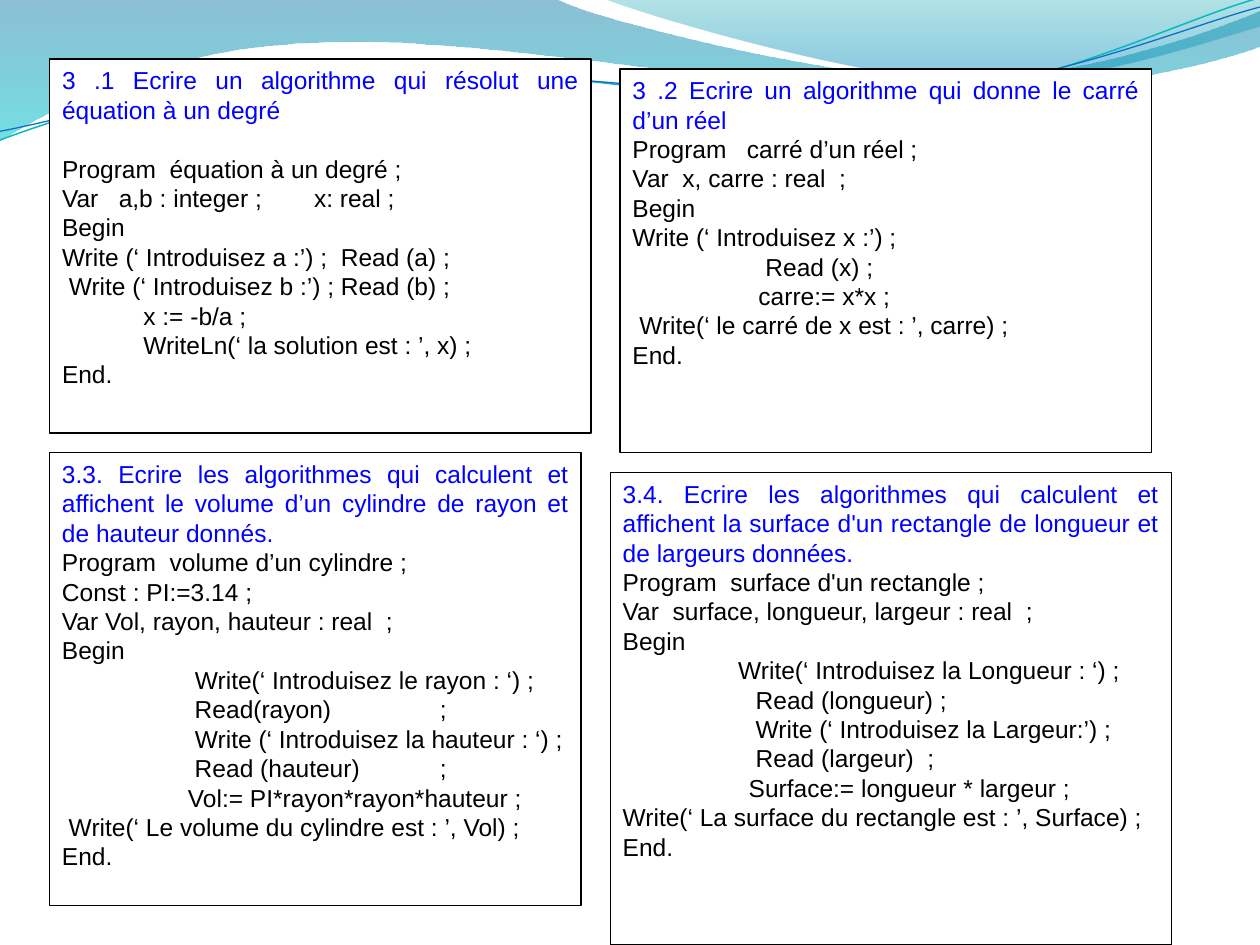
from dataclasses import dataclass

from lxml import etree
from pptx import Presentation
from pptx.dml.color import RGBColor
from pptx.enum.shapes import MSO_SHAPE
from pptx.enum.text import MSO_ANCHOR, PP_ALIGN
from pptx.oxml.ns import qn
from pptx.util import Pt

RECT = MSO_SHAPE.RECTANGLE
TOP = MSO_ANCHOR.TOP
LEFT, BOTH = PP_ALIGN.LEFT, PP_ALIGN.JUSTIFY


@dataclass(frozen=True)
class Theme:
    font: str = "Arial"
    size: float = 14
    head: str = "0000FF"
    ink: str = "000000"
    paper: str = "FFFFFF"
    edge: float = 0.75
    teal: str = "0AB8BF"
    blue: str = "0F6FC6"
    wave: tuple = ((0, "0074A1", 45), (1, "00C6CF", 55))
    crest: tuple = ((0, "00A1A9", 30), (0.8, "008BBF", 45))


THEME = Theme()


@dataclass(frozen=True)
class Curve:
    """Each step holds one point (line) or three points (cubic), flat."""
    start: tuple
    steps: tuple
    stops: tuple = ()
    color: str = ""
    width: float = 0


@dataclass(frozen=True)
class Line:
    text: str
    dent: float = 0


@dataclass(frozen=True)
class Box:
    x: float
    y: float
    w: float
    h: float
    title: str
    lines: tuple
    gap: float = 0


CURVES = (
    Curve((0, 0), (
        (317, -1), (343, 12, 478, 45, 546, 45), (614, 45, 690, 19, 720, 6),
        (721, 26), (708, 32, 626, 55, 537, 54), (447, 54, 275, 20, 185, 24),
        (93, 26, 33, 60, -1, 81)), stops=THEME.wave),
    Curve((345, -1), (
        (366, 8, 491, 45, 554, 47), (616, 50, 692, 23, 720, 15),
        (720, 0)), stops=THEME.crest),
    Curve((0, 80), (
        (35, 67, 114, 41, 199, 37), (284, 34, 427, 64, 513, 58),
        (599, 51, 675, 11, 719, -1)), color=THEME.teal, width=0.85),
    Curve((0, 75), (
        (34, 69, 118, 44, 204, 40), (290, 37, 430, 60, 516, 54),
        (602, 48, 678, 15, 720, 4)), color=THEME.blue, width=0.75),
)

STEP, DEEP = 72, 76

BOXES = (
    Box(348.75, 270, 320.5, 270,
        "3.4. Ecrire les algorithmes qui calculent et affichent la surface "
        "d'un rectangle de longueur et de largeurs données.",
        (Line("Program  surface d'un rectangle ;"),
         Line("Var  surface, longueur, largeur : real  ;"),
         Line("Begin"),
         Line("Write(‘ Introduisez la Longueur : ‘) ;", 66),
         Line("Read (longueur) ;", DEEP),
         Line("Write (‘ Introduisez la Largeur:’) ;", DEEP),
         Line("Read (largeur)  ;", DEEP),
         Line("Surface:= longueur * largeur ;", STEP),
         Line("Write(‘ La surface du rectangle est : ’, Surface) ;"),
         Line("End."))),
    Box(28.35, 258.75, 303.75, 258.75,
        "3.3. Ecrire les algorithmes qui calculent et affichent le volume "
        "d’un cylindre de rayon et de hauteur donnés.",
        (Line("Program  volume d’un cylindre ;"),
         Line("Const : PI:=3.14 ;"),
         Line("Var Vol, rayon, hauteur : real  ;"),
         Line("Begin"),
         Line("Write(‘ Introduisez le rayon : ‘) ;", DEEP),
         Line("\t Read(rayon)\t;"),
         Line("Write (‘ Introduisez la hauteur : ‘) ;", DEEP),
         Line("\t Read (hauteur)\t;"),
         Line("Vol:= PI*rayon*rayon*hauteur ;", STEP),
         Line(" Write(‘ Le volume du cylindre est : ’, Vol) ;"),
         Line("End."))),
    Box(354.35, 39.4, 303.75, 219.4,
        "3 .2 Ecrire un algorithme qui donne le carré d’un réel",
        (Line("Program   carré d’un réel ;"),
         Line("Var  x, carre : real  ;"),
         Line("Begin"),
         Line("Write (‘ Introduisez x :’) ;"),
         Line("Read (x) ;", DEEP),
         Line("carre:= x*x ;", STEP),
         Line(" Write(‘ le carré de x est : ’, carre) ;"),
         Line("End."))),
    Box(28.35, 33.75, 309.4, 213.75,
        "3 .1 Ecrire un algorithme qui résolut une équation à un degré",
        (Line("Program  équation à un degré ;"),
         Line("Var   a,b : integer ;\tx: real ;"),
         Line("Begin"),
         Line("Write (‘ Introduisez a :’) ;  Read (a) ;"),
         Line(" Write (‘ Introduisez b :’) ; Read (b) ;"),
         Line("x := -b/a ;", 46.5),
         Line("WriteLn(‘ la solution est : ’, x) ;", 46.5),
         Line("End.")), gap=16.8),
)


def rgb(code: str) -> RGBColor:
    return RGBColor.from_string(code)


def bend(shape, steps: tuple) -> None:
    """Join each three lines that stand for a cubic into one curve."""
    lines = iter(list(shape._element.iter(qn("a:lnTo"))))
    for step in steps:
        first = next(lines)
        if len(step) == 6:
            cubic = etree.Element(qn("a:cubicBezTo"))
            first.addprevious(cubic)
            for line in (first, next(lines), next(lines)):
                cubic.append(line[0])
                line.getparent().remove(line)


def shade(shape, stops: tuple) -> None:
    """Fill from top to bottom with see-through colours."""
    shape.fill.gradient()
    shape.fill.gradient_angle = 270
    for stop, (place, code, alpha) in zip(shape.fill.gradient_stops, stops):
        stop.position = place
        stop.color.rgb = rgb(code)
    for node, stop in zip(shape._element.iter(qn("a:srgbClr")), stops):
        etree.SubElement(node, qn("a:alpha"), val=str(stop[2] * 1000))


def draw_curve(slide, curve: Curve) -> None:
    x, y = curve.start
    dots = [(Pt(step[i]), Pt(step[i + 1]))
            for step in curve.steps for i in range(0, len(step), 2)]
    pen = slide.shapes.build_freeform(Pt(x), Pt(y))
    pen.add_line_segments(dots, close=bool(curve.stops))
    shape = pen.convert_to_shape()
    bend(shape, curve.steps)
    shape.shadow.inherit = False
    if curve.stops:
        shade(shape, curve.stops)
        shape.line.fill.background()
    else:
        shape.fill.background()
        shape.line.color.rgb = rgb(curve.color)
        shape.line.width = Pt(curve.width)


def write(par, text: str, *, color: str = THEME.ink, align=LEFT,
          dent: float = 0, gap: float = 0) -> None:
    par.alignment = align
    par.space_after = Pt(gap)
    props = par._p.get_or_add_pPr()
    if dent:
        props.set("marL", str(Pt(dent)))
    if "\t" in text:
        props.set("defTabSz", str(Pt(STEP)))
        group = etree.SubElement(props, qn("a:tabLst"))
        for i in (1, 2, 3):
            etree.SubElement(group, qn("a:tab"), pos=str(Pt(i * STEP)),
                             algn="l")
    run = par.add_run()
    run.text = text
    run.font.name, run.font.size = THEME.font, Pt(THEME.size)
    run.font.color.rgb = rgb(color)


def draw_box(slide, box: Box) -> None:
    shape = slide.shapes.add_shape(
        RECT, Pt(box.x), Pt(box.y), Pt(box.w), Pt(box.h))
    shape.shadow.inherit = False
    shape.fill.solid()
    shape.fill.fore_color.rgb = rgb(THEME.paper)
    shape.line.color.rgb = rgb(THEME.ink)
    shape.line.width = Pt(THEME.edge)
    frame = shape.text_frame
    frame.word_wrap, frame.vertical_anchor = True, TOP
    write(frame.paragraphs[0], box.title, color=THEME.head, align=BOTH,
          gap=box.gap)
    for line in box.lines:
        write(frame.add_paragraph(), line.text, dent=line.dent)


def main() -> None:
    deck = Presentation()
    deck.slide_width, deck.slide_height = Pt(720), Pt(540)
    slide = deck.slides.add_slide(deck.slide_layouts[6])
    for curve in CURVES:
        draw_curve(slide, curve)
    for box in BOXES:
        draw_box(slide, box)
    deck.save("out.pptx")


if __name__ == "__main__":
    main()
